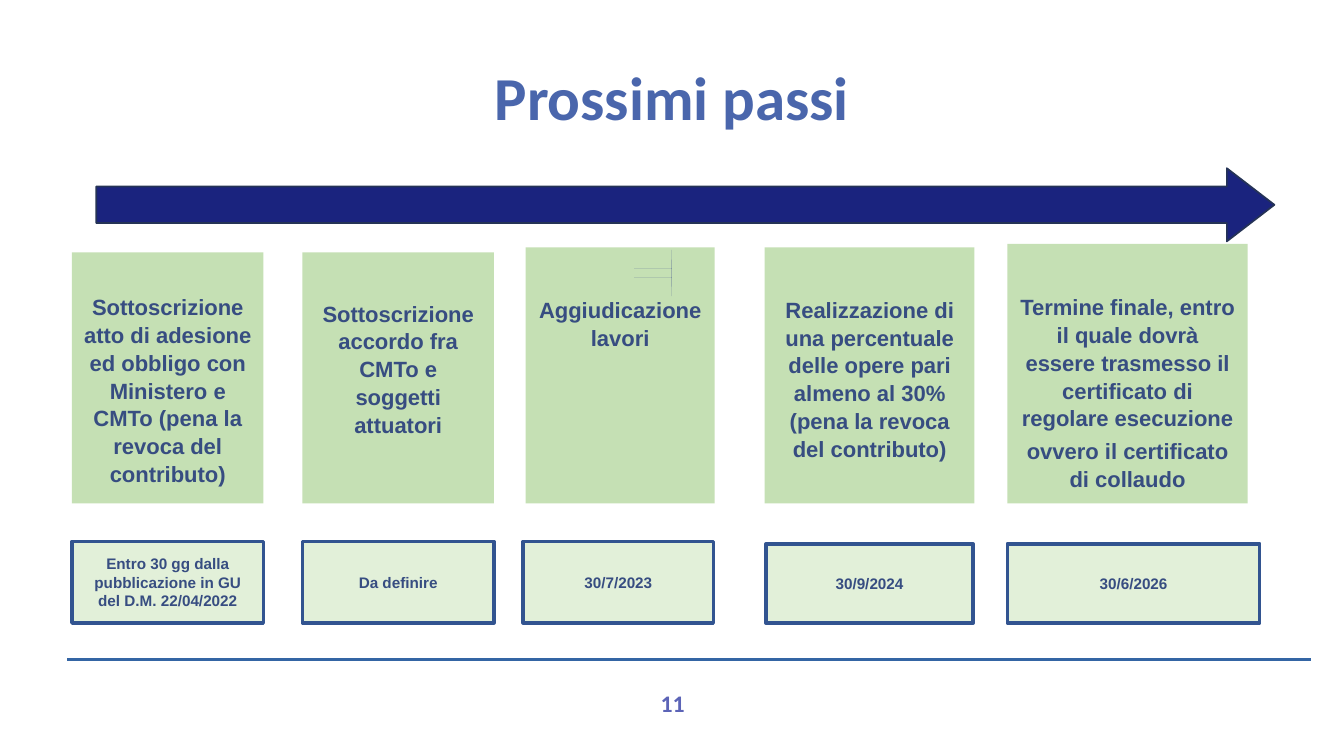
from pptx import Presentation
from pptx.dml.color import RGBColor
from pptx.enum.shapes import MSO_CONNECTOR, MSO_SHAPE
from pptx.enum.text import MSO_ANCHOR, PP_ALIGN
from pptx.util import Inches, Pt
from lxml.etree import SubElement
from pptx.oxml.ns import qn

TITLE = "Prossimi passi"
PAGE = "11"
CARD_BOTTOM = 4.13
DATE_BOTTOM = 5.11
INK = "374D81"
NAVY = "1A237E"

STEPS = [
    dict(card=(0.59, 2.07, 1.57), pad=0.33, date=(0.59, 4.44, 1.57),
         text=["Sottoscrizione atto di adesione ed obbligo con Ministero e CMTo (pena la revoca del contributo)"],
         due="Entro 30 gg dalla pubblicazione in GU del D.M. 22/04/2022"),
    dict(card=(2.48, 2.07, 1.57), pad=0.38, date=(2.48, 4.44, 1.57),
         text=["Sottoscrizione accordo fra CMTo e soggetti attuatori"],
         due="Da definire"),
    dict(card=(4.31, 2.03, 1.55), pad=0.39, date=(4.29, 4.44, 1.56),
         text=["Aggiudicazione lavori"],
         due="30/7/2023"),
    dict(card=(6.27, 2.03, 1.72), pad=0.39, date=(6.28, 4.46, 1.7),
         text=["Realizzazione di una percentuale delle opere pari almeno al 30% (pena la revoca del contributo)"],
         due="30/9/2024"),
    dict(card=(8.26, 2, 1.97), pad=0.4, date=(8.26, 4.46, 2.07),
         text=["Termine finale, entro il quale dovrà essere trasmesso il certificato di regolare esecuzione",
               "ovvero il certificato di collaudo"],
         due="30/6/2026"),
]


def rgb(value):
    return RGBColor.from_string(value)


def write(sp, lines, size, color=INK, font="Arial", anchor=MSO_ANCHOR.MIDDLE,
          insets=(0.1, 0.05, 0.1, 0.05), spacing=1.0):
    tf = sp.text_frame
    tf.word_wrap = True
    tf.vertical_anchor = anchor
    tf.margin_left, tf.margin_top, tf.margin_right, tf.margin_bottom = map(Inches, insets)
    for i, line in enumerate(lines):
        p = tf.paragraphs[0] if i == 0 else tf.add_paragraph()
        p.alignment = PP_ALIGN.CENTER
        p.line_spacing = spacing
        p.space_before = Pt(3 if i else 0)
        r = p.add_run()
        r.text = line
        r.font.name, r.font.size, r.font.bold = font, Pt(size), True
        r.font.color.rgb = rgb(color)


def paint(sp, fill, line=None, width=1):
    sp.shadow.inherit = False
    sp.fill.solid()
    sp.fill.fore_color.rgb = rgb(fill)
    if line:
        sp.line.color.rgb = rgb(line)
        sp.line.width = Pt(width)
    else:
        sp.line.fill.background()


def box(place, bottom, fill, **outline):
    left, top, width = place
    sp = s.shapes.add_shape(MSO_SHAPE.RECTANGLE, Inches(left), Inches(top),
                            Inches(width), Inches(bottom - top))
    paint(sp, fill, **outline)
    return sp


prs = Presentation()
prs.slide_width, prs.slide_height = Inches(11.02), Inches(6.2)
s = prs.slides.add_slide(prs.slide_layouts[5])

rule = s.shapes.add_connector(MSO_CONNECTOR.STRAIGHT, Inches(0.55), Inches(5.41),
                              Inches(10.75), Inches(5.41))
rule.line.color.rgb = rgb("3465A4")
rule.line.width = Pt(1.42)
SubElement(rule._element.spPr, qn("a:effectLst"))

number = s.shapes.add_textbox(Inches(3.77), Inches(5.65), Inches(3.49), Inches(0.42))
write(number, [PAGE], 14, "5C64B7", "Calibri", MSO_ANCHOR.TOP, (0, 0, 0, 0))

title = s.shapes.title
title.left, title.top, title.width, title.height = map(Inches, (0.55, 0.19, 9.92, 1.19))
write(title, [TITLE], 36, "4A66AC", "Calibri", insets=(0, 0, 0, 0))

arrow = s.shapes.add_shape(MSO_SHAPE.RIGHT_ARROW, Inches(0.79), Inches(1.38),
                           Inches(9.66), Inches(0.6))
arrow.adjustments[0], arrow.adjustments[1] = 0.5, 0.65
paint(arrow, NAVY, "253356")

for step in STEPS:
    card = box(step["card"], CARD_BOTTOM, "C5E0B4")
    write(card, step["text"], 13, anchor=MSO_ANCHOR.TOP,
          insets=(0.1, step["pad"], 0.1, 0.05), spacing=1.05)
    date = box(step["date"], DATE_BOTTOM, "E2F0D9", line="325490", width=2)
    write(date, [step["due"]], 9)

for y in (2.2, 2.28):
    points = [(5.51, y), (5.51, y - 0.15), (5.51, y), (5.51, y + 0.15), (5.51, y)]
    tick = s.shapes.build_freeform(Inches(5.2), Inches(y))
    tick.add_line_segments([(Inches(a), Inches(b)) for a, b in points])
    paint(tick.convert_to_shape(), NAVY)

prs.save("out.pptx")
